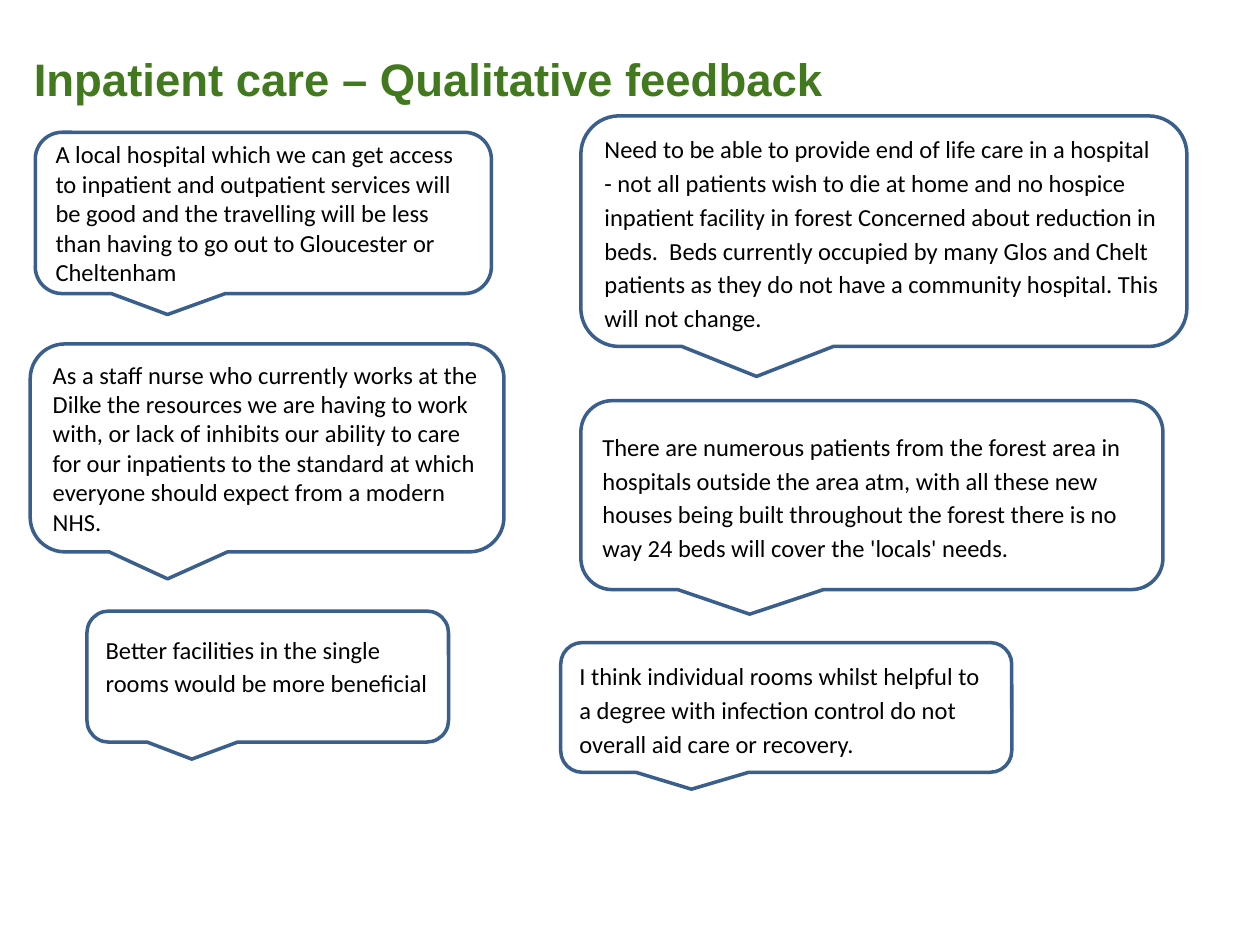
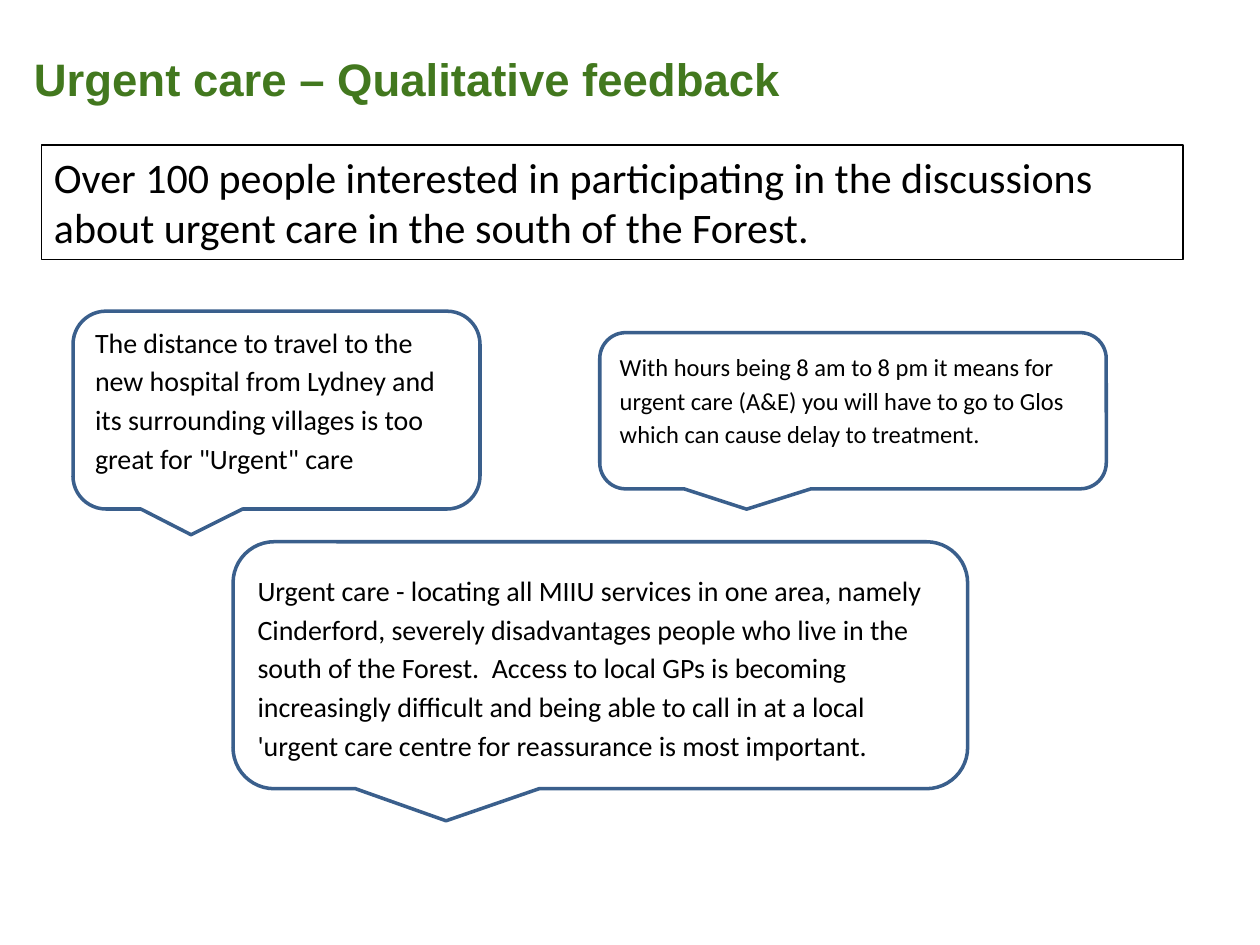
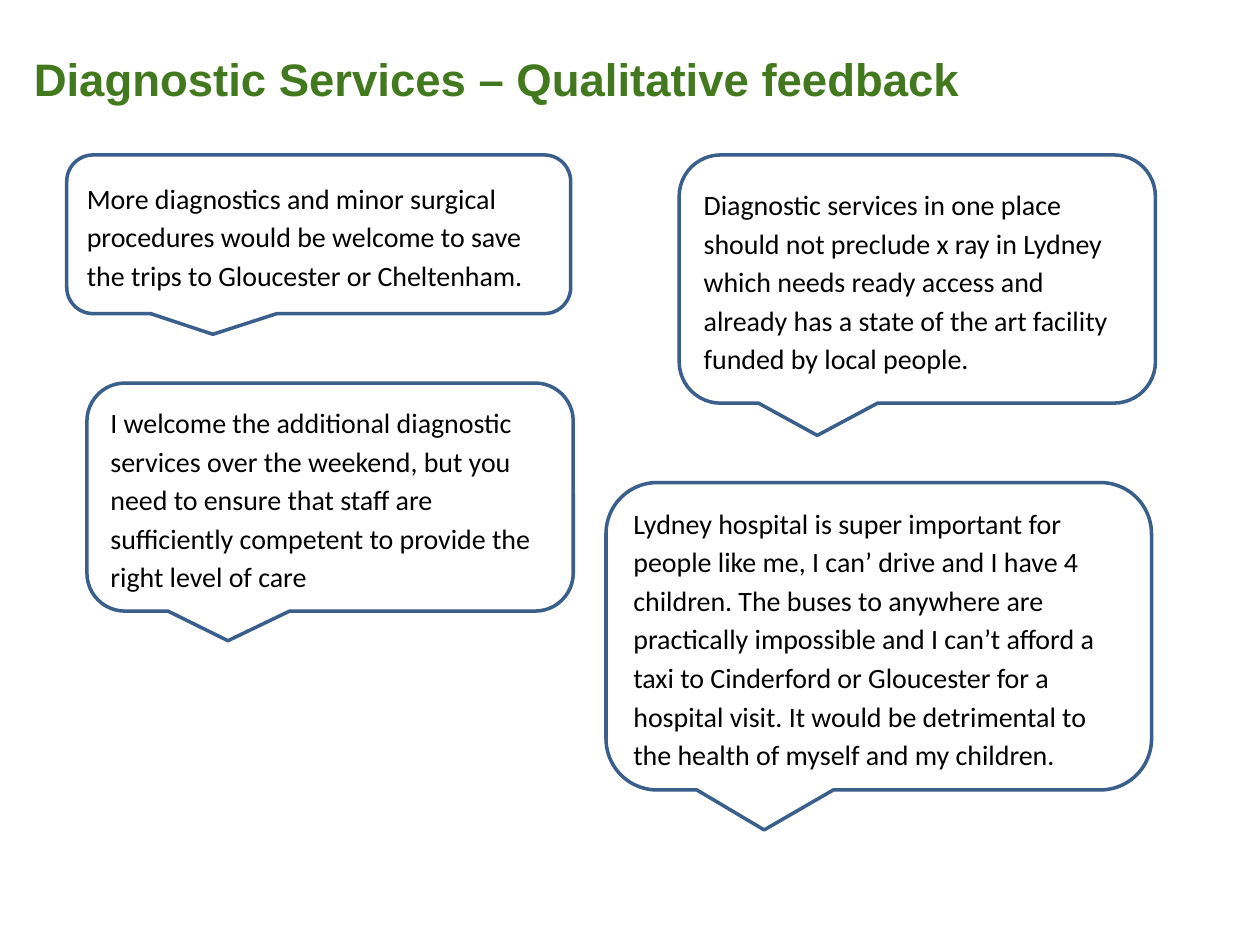
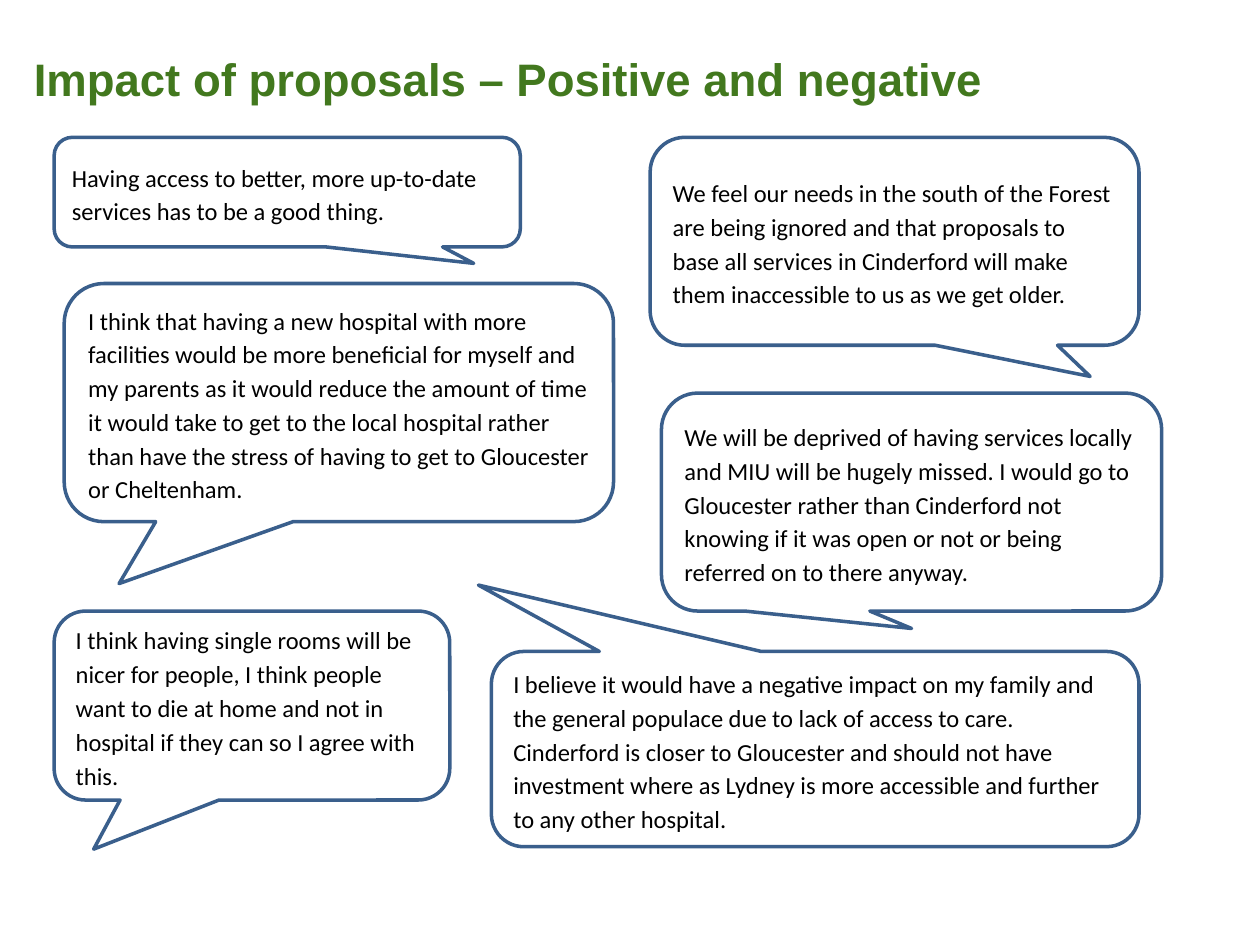
"""Build four slides of patient feedback shown as speech bubbles."""
from pptx import Presentation
from pptx import util as u
from pptx.dml.color import RGBColor
from pptx.enum import shapes, text

GREEN, BLUE, BLACK = "42781E", "3A5F8C", "000000"
COLUMNS, ROWS = 100, 75
WIDTH, HEIGHT = u.Inches(10), u.Inches(7.5)
TITLE_AREA = (1.7, 0, 96.3, 12.5)

TAIL_DOWN = (-0.21, 0.63)
TAIL_RIGHT = (0.4, 0.65)
TAIL_LEFT = (-0.4, 0.76)
TAIL_CENTRE = (0, 0.58)
TAIL_UP = (-0.52, -0.84)
ROOM_BELOW = 0.25

SLIDES = [
    {"title": "Inpatient care – Qualitative feedback",
     "size": 14,
     "quotes": [
         {"area": (46.1, 31.8, 46.2, 15),
          "words": "There are numerous patients from the forest area in hospitals outside the area atm, "
                   "with all these new houses being built throughout the forest there is no way 24 beds "
                   "will cover the 'locals' needs."},
         {"area": (2.8, 10.5, 36.2, 12.8), "spacing": 1,
          "words": "A local hospital which we can get access to inpatient and outpatient services will "
                   "be good and the travelling will be less than having to go out to Gloucester or "
                   "Cheltenham"},
         {"area": (2.4, 27.3, 37.6, 16.5), "spacing": 1,
          "words": "As a staff nurse who currently works at the Dilke the resources we are having to "
                   "work with, or lack of inhibits our ability to care for our inpatients to the "
                   "standard at which everyone should expect from a modern NHS."},
         {"area": (46.1, 9.2, 48.1, 18.3),
          "words": "Need to be able to provide end of life care in a hospital - not all patients wish "
                   "to die at home and no hospice inpatient facility in forest Concerned about "
                   "reduction in beds.  Beds currently occupied by many Glos and Chelt patients as "
                   "they do not have a community hospital. This will not change."},
         {"area": (44.5, 51, 35.8, 10.3),
          "words": "I think individual rooms whilst helpful to a degree with infection control do not "
                   "overall aid care or recovery."},
         {"area": (6.9, 48.5, 28.7, 10.4), "below": ROOM_BELOW,
          "words": "Better facilities in the single rooms would be more beneficial"},
     ]},
    {"title": "Urgent care – Qualitative feedback",
     "size": 16,
     "quotes": [
         {"area": (5.8, 24.7, 32.3, 15.7), "below": ROOM_BELOW,
          "words": "The distance to travel to the new hospital from Lydney and its surrounding "
                   "villages is too great for \"Urgent\" care"},
         {"area": (47.6, 26.4, 40.2, 12.4), "size": 14, "below": ROOM_BELOW,
          "words": "With hours being 8 am to 8 pm it means for urgent care (A&E) you will have to go "
                   "to Glos which can cause delay to treatment."},
         {"area": (18.5, 43, 58.3, 19.6),
          "words": "Urgent care - locating all MIIU services in one area, namely Cinderford, severely "
                   "disadvantages people who live in the south of the Forest.  Access to local GPs is "
                   "becoming increasingly difficult and being able to call in at a local 'urgent care "
                   "centre for reassurance is most important."},
     ],
     "notice": {"area": (3.3, 11.5, 90.6, 9.1),
                "words": "Over 100 people interested in participating in the discussions about urgent "
                         "care in the south of the Forest."}},
    {"title": "Diagnostic Services – Qualitative feedback",
     "size": 16,
     "quotes": [
         {"area": (6.9, 30.4, 38.6, 18.1),
          "words": "I welcome the additional diagnostic services over the weekend, but you need to "
                   "ensure that staff are sufficiently competent to provide the right level of care"},
         {"area": (5.3, 12.3, 40, 12.6),
          "words": "More diagnostics and minor surgical procedures would be welcome to save the trips "
                   "to Gloucester or Cheltenham."},
         {"area": (53.9, 12.3, 37.8, 19.7),
          "words": "Diagnostic services in one place should not preclude x ray in Lydney which needs "
                   "ready access and already has a state of the art facility funded by local people."},
         {"area": (48.1, 38.3, 43.3, 24.4),
          "words": "Lydney hospital is super important for people like me, I can’ drive and I have 4 "
                   "children. The buses to anywhere are practically impossible and I can’t afford a "
                   "taxi to Cinderford or Gloucester for a hospital visit. It would be detrimental to "
                   "the health of myself and my children."},
     ]},
    {"title": "Impact of proposals – Positive and negative",
     "size": 14,
     "quotes": [
         {"area": (4.3, 10.9, 37, 8.7), "tail": TAIL_RIGHT,
          "words": "Having access to better, more up-to-date services has to be a good thing."},
         {"area": (5.1, 22.5, 43.6, 18.9), "tail": TAIL_LEFT,
          "words": "I think that having a new hospital with more facilities would be more beneficial "
                   "for myself and my parents as it would reduce the amount of time it would take to "
                   "get to the local hospital rather than have the stress of having to get to "
                   "Gloucester or Cheltenham."},
         {"area": (4.3, 48.5, 31.4, 15), "tail": TAIL_LEFT,
          "words": "I think having single rooms will be nicer for people, I think people want to die "
                   "at home and not in hospital if they can so I agree with this."},
         {"area": (51.6, 10.9, 38.8, 16.5), "tail": TAIL_RIGHT,
          "words": "We feel our needs in the south of the Forest are being ignored and that proposals "
                   "to base all services in Cinderford will make them inaccessible to us as we get "
                   "older."},
         {"area": (52.5, 31.2, 39.7, 17.3), "tail": TAIL_CENTRE,
          "words": "We will be deprived of having services locally and MIU will be hugely missed. I "
                   "would go to Gloucester rather than Cinderford not knowing if it was open or not or "
                   "being referred on to there anyway."},
         {"area": (39, 51.7, 51.4, 15.5), "tail": TAIL_UP,
          "words": "I believe it would have a negative impact on my family and the general populace "
                   "due to lack of access to care. Cinderford is closer to Gloucester and should not "
                   "have investment where as Lydney is more accessible and further to any other "
                   "hospital."},
     ]},
]


def colour(hex_string):
    return RGBColor.from_string(hex_string)


def place(area):
    left, top, width, height = area
    return (int(WIDTH * left / COLUMNS), int(HEIGHT * top / ROWS),
            int(WIDTH * width / COLUMNS), int(HEIGHT * height / ROWS))


def write(shape, words, size, font="Calibri", ink=BLACK, bold=False, spacing=1,
          anchor=text.MSO_ANCHOR.MIDDLE, below=0.05):
    frame = shape.text_frame
    frame.word_wrap = True
    frame.vertical_anchor = anchor
    frame.margin_bottom = u.Inches(below)
    paragraph = frame.paragraphs[0]
    paragraph.alignment = text.PP_ALIGN.LEFT
    paragraph.line_spacing = spacing
    run = paragraph.add_run()
    run.text = words
    run.font.name = font
    run.font.size = u.Pt(size)
    run.font.bold = bold
    run.font.color.rgb = colour(ink)


def add_outline(slide, kind, area, ink, weight):
    shape = slide.shapes.add_shape(kind, *place(area))
    shape.shadow.inherit = False
    shape.fill.background()
    shape.line.color.rgb = colour(ink)
    shape.line.width = u.Pt(weight)
    return shape


def add_quote(slide, area, words, size, tail=TAIL_DOWN, spacing=1.15, below=0.05):
    bubble = add_outline(slide, shapes.MSO_SHAPE.ROUNDED_RECTANGULAR_CALLOUT, area, BLUE, 2)
    bubble.adjustments[0], bubble.adjustments[1] = tail
    write(bubble, words, size, spacing=spacing, below=below)


def add_notice(slide, area, words):
    box = add_outline(slide, shapes.MSO_SHAPE.RECTANGLE, area, BLACK, 0.75)
    write(box, words, 24, anchor=text.MSO_ANCHOR.TOP)


def add_slide(presentation, content):
    slide = presentation.slides.add_slide(presentation.slide_layouts[6])
    title = slide.shapes.add_textbox(*place(TITLE_AREA))
    write(title, content["title"], 26, font="Arial", ink=GREEN, bold=True)
    for quote in content["quotes"]:
        add_quote(slide, **{"size": content["size"], **quote})
    if "notice" in content:
        add_notice(slide, **content["notice"])


def main():
    presentation = Presentation()
    presentation.slide_width, presentation.slide_height = WIDTH, HEIGHT
    for content in SLIDES:
        add_slide(presentation, content)
    presentation.save("out.pptx")


if __name__ == "__main__":
    main()
